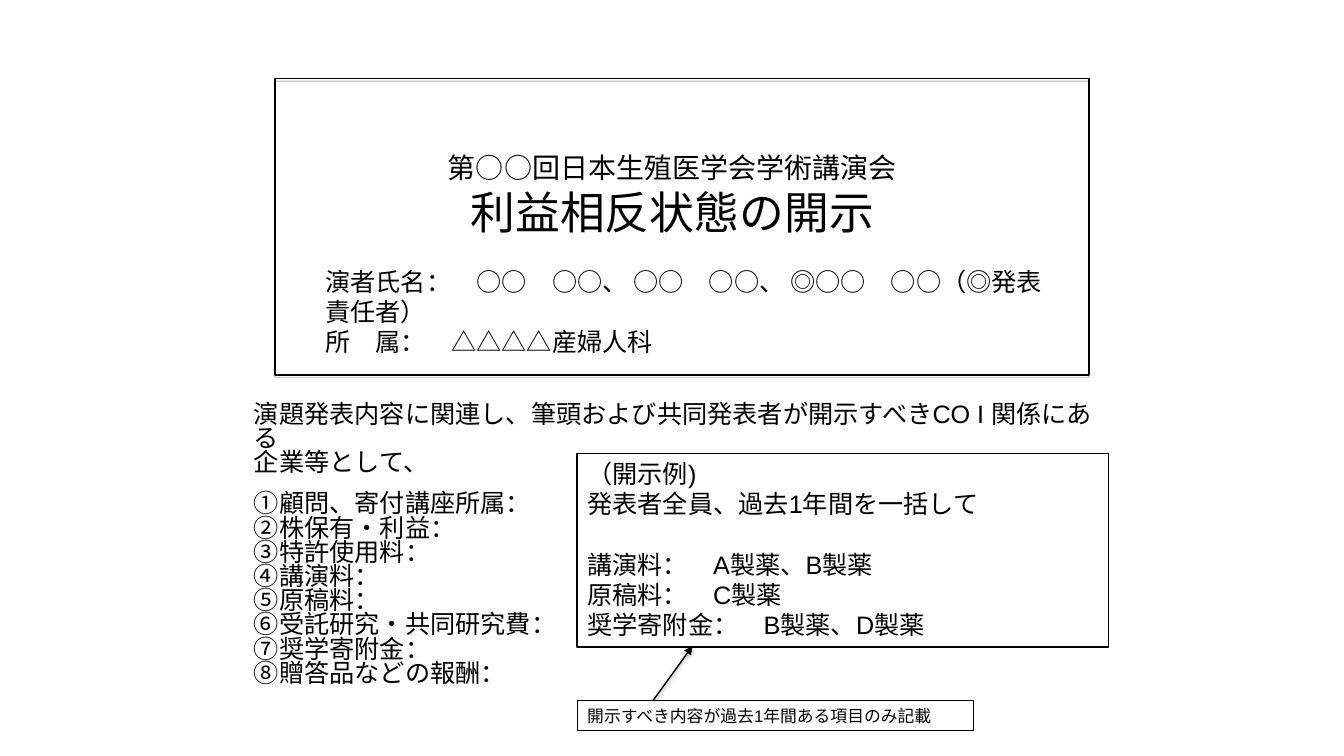
import pptx
import pptx.dml.color
import pptx.enum.shapes
import pptx.enum.text
import pptx.oxml
import pptx.oxml.ns
import pptx.util
from pptx.util import Cm, Pt

BLACK = pptx.dml.color.RGBColor(0x00, 0x00, 0x00)
SHADOW_GREY = pptx.dml.color.RGBColor(0x80, 0x80, 0x80)

DISCLOSURE_ITEMS = [
    "①顧問、寄付講座所属：",
    "②株保有・利益：",
    "③特許使用料：",
    "④講演料：",
    "⑤原稿料：",
    "⑥受託研究・共同研究費：",
    "⑦奨学寄附金：",
    "⑧贈答品などの報酬：",
]


def add_span(para, text, size, font="Arial"):
    span = para.add_run()
    span.text = text
    span.font.name = font
    span.font.size = Pt(size)
    span.font.color.rgb = BLACK


def fill_paragraphs(box, lines, size, line_spacing=None):
    """Write one paragraph per line and return the paragraphs."""
    frame = box.text_frame
    frame.word_wrap = True
    for index, line in enumerate(lines):
        para = frame.add_paragraph() if index else frame.paragraphs[0]
        if line_spacing:
            para.line_spacing = line_spacing
        add_span(para, line, size)
    return frame.paragraphs


def add_text_box(page, left, top, width, height, border=None):
    box = page.shapes.add_textbox(Cm(left), Cm(top), Cm(width), Cm(height))
    if border:
        box.line.color.rgb = BLACK
        box.line.width = Pt(border)
    return box


def add_shadow(shape, color, opacity, blur, distance):
    """Cast a shadow straight down; opacity in percent, lengths in points."""
    effects = pptx.oxml.parse_xml(
        f'<a:effectLst {pptx.oxml.ns.nsdecls("a")}>'
        f'<a:outerShdw blurRad="{Pt(blur)}" dist="{Pt(distance)}" dir="5400000"'
        f' rotWithShape="0"><a:srgbClr val="{color}">'
        f'<a:alpha val="{opacity * 1000}"/></a:srgbClr></a:outerShdw></a:effectLst>'
    )
    shape._element.spPr.append(effects)


def format_title(title):
    title.left, title.top = Cm(6.15), Cm(1.75)
    title.width, title.height = Cm(21.59), Cm(8.38)
    frame = title.text_frame
    frame.auto_size = pptx.enum.text.MSO_AUTO_SIZE.NONE
    frame.vertical_anchor = pptx.enum.text.MSO_ANCHOR.MIDDLE
    frame.margin_bottom = Cm(2.2)
    heading = [("第○○回日本生殖医学会学術講演会", 20), ("利益相反状態の開示", 32)]
    for index, (text, size) in enumerate(heading):
        para = frame.add_paragraph() if index else frame.paragraphs[0]
        para.alignment = pptx.enum.text.PP_ALIGN.CENTER
        add_span(para, text, size, "Calibri")


def add_title_frame(page):
    frame = page.shapes.add_shape(
        pptx.enum.shapes.MSO_SHAPE.RECTANGLE, Cm(6.93), Cm(1.98), Cm(20.52), Cm(7.47)
    )
    frame.fill.background()
    frame.line.color.rgb = BLACK
    frame.line.width = Pt(1)
    add_shadow(frame, SHADOW_GREY, 35, 0, 1.8)


def add_arrow(page, start, end):
    arrow = page.shapes.add_connector(
        pptx.enum.shapes.MSO_CONNECTOR.STRAIGHT, *map(Cm, start + end)
    )
    arrow.line.color.rgb = BLACK
    arrow.line.width = Pt(1)
    arrow.line._get_or_add_ln().append(
        pptx.oxml.parse_xml(f'<a:tailEnd {pptx.oxml.ns.nsdecls("a")} type="triangle"/>')
    )
    add_shadow(arrow, BLACK, 38, 3.1, 1.6)


def main():
    deck = pptx.Presentation()
    deck.slide_width, deck.slide_height = Cm(33.87), Cm(19.05)
    page = deck.slides.add_slide(deck.slide_layouts[5])

    format_title(page.shapes.title)
    add_title_frame(page)

    speakers = add_text_box(page, 7.95, 6.58, 18.97, 2.57)
    fill_paragraphs(
        speakers,
        [
            "演者氏名：　○○　○○、 ○○　○○、 ◎○○　○○（◎発表責任者）",
            "所　属：　△△△△産婦人科",
        ],
        18,
    )

    disclosure = add_text_box(page, 6.15, 10.06, 22.02, 6.83)
    introduction = [
        "演題発表内容に関連し、筆頭および共同発表者が開示すべきCO I 関係にある",
        "企業等として、",
    ]
    paras = fill_paragraphs(disclosure, introduction + DISCLOSURE_ITEMS, 18, 0.8)
    paras[len(introduction) - 1].space_after = Pt(12)

    example = add_text_box(page, 14.55, 11.43, 13.39, 4.88, border=1.25)
    paras = fill_paragraphs(
        example,
        [
            "（開示例)",
            "発表者全員、過去1年間を一括して",
            "講演料：　A製薬、B製薬",
            "原稿料：　C製薬",
            "奨学寄附金：　B製薬、D製薬",
        ],
        18,
    )
    paras[2].space_before = Pt(21.5)

    note = add_text_box(page, 14.55, 17.65, 9.98, 0.76, border=1)
    fill_paragraphs(note, ["開示すべき内容が過去1年間ある項目のみ記載"], 12)
    add_arrow(page, (16.46, 17.65), (17.45, 16.28))

    deck.save("out.pptx")


if __name__ == "__main__":
    main()
